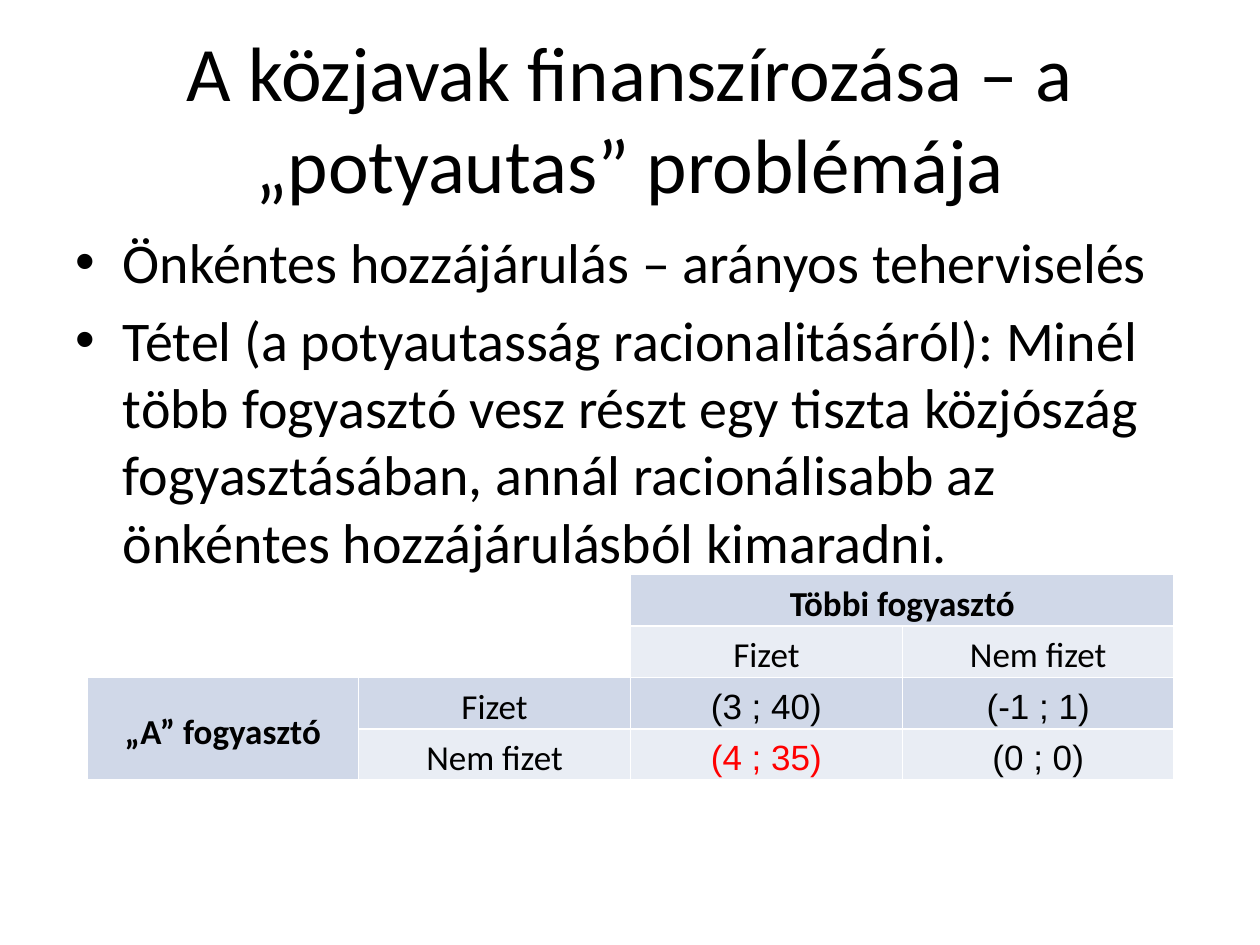
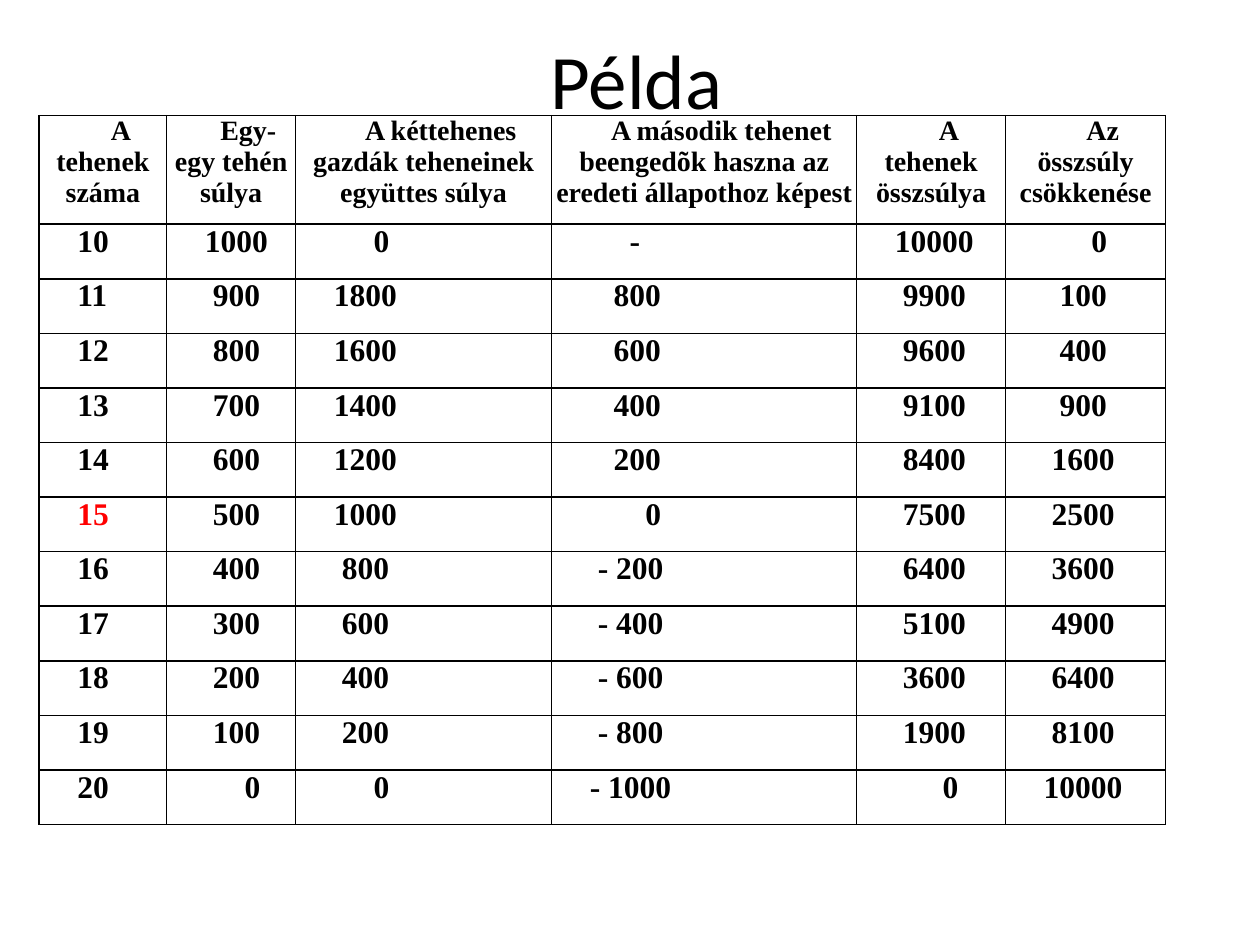
from lxml import etree
from pptx import Presentation
from pptx.dml.color import RGBColor
from pptx.enum.text import MSO_ANCHOR, MSO_AUTO_SIZE, PP_ALIGN
from pptx.oxml.ns import qn
from pptx.util import Cm, Pt

LEFT, CENTER = PP_ALIGN.LEFT, PP_ALIGN.CENTER
TOP, MIDDLE = MSO_ANCHOR.TOP, MSO_ANCHOR.MIDDLE
NO_AUTOFIT = MSO_AUTO_SIZE.NONE

COLORS = {
    "text": "000000",
    "highlight": "FF0000",
    "grid": "000000",
    "gap": "FFFFFF",
    "dark band": "D0D8E8",
    "light band": "E9EDF4",
}
HEADING_FONT = "Calibri"
PAYOFF_FONT = "Arial"
EXAMPLE_FONT = "Times New Roman"


def add_grid(slide, left, top, widths, heights, border, side_margin):
    """Add a plain table, sizes in cm, with every cell unfilled and bordered."""
    table = slide.shapes.add_table(
        len(heights), len(widths), Cm(left), Cm(top),
        Cm(sum(widths)), Cm(sum(heights))).table
    table.first_row = table.horz_banding = False
    for column, width in zip(table.columns, widths):
        column.width = Cm(width)
    for row, height in zip(table.rows, heights):
        row.height = Cm(height)
    for cell in table.iter_cells():
        cell.margin_left = cell.margin_right = Cm(side_margin)
        cell.margin_top = cell.margin_bottom = 0
        properties = cell._tc.get_or_add_tcPr()
        for side in ("lnL", "lnR", "lnT", "lnB"):
            line = etree.SubElement(properties, qn(f"a:{side}"), w=str(Pt(1)))
            fill = etree.SubElement(line, qn("a:solidFill"))
            etree.SubElement(fill, qn("a:srgbClr"), val=COLORS[border])
        cell.fill.background()
    return table


def write_cell(cell, text, font, size, align, anchor, color="text", bold=False):
    cell.vertical_anchor = anchor
    paragraph = cell.text_frame.paragraphs[0]
    paragraph.text = text
    paragraph.alignment = align
    paragraph.font.name = font
    paragraph.font.size = Pt(size)
    paragraph.font.bold = bold
    paragraph.font.color.rgb = RGBColor.from_string(COLORS[color])
    return paragraph


prs = Presentation()
prs.slide_width, prs.slide_height = Cm(25.4), Cm(19.05)
title_and_content, title_only = prs.slide_layouts[1], prs.slide_layouts[5]

# Titles
free_rider = prs.slides.add_slide(title_and_content)
example = prs.slides.add_slide(title_only)
for slide, heading, left, top in [
    (free_rider, "A közjavak finanszírozása – a „potyautas” problémája", 1.27, 0.76),
    (example, "Példa", 1.4, 0),
]:
    title = slide.shapes.title
    title.left, title.top = Cm(left), Cm(top)
    title.width, title.height = Cm(22.86), Cm(3.18)
    title.text_frame.text = heading
    title.text_frame.auto_size = NO_AUTOFIT
    title.text_frame.vertical_anchor = MIDDLE
    paragraph = title.text_frame.paragraphs[0]
    paragraph.alignment = CENTER
    paragraph.font.name = HEADING_FONT
    paragraph.font.size = Pt(44)
    paragraph.font.color.rgb = RGBColor.from_string(COLORS["text"])

# Free-rider theorem
theorem = free_rider.placeholders[1]
theorem.left, theorem.top = Cm(1.27), Cm(4.45)
theorem.width, theorem.height = Cm(22.86), Cm(12.57)
theorem.text_frame.text = "\n".join([
    "Önkéntes hozzájárulás – arányos teherviselés",
    "Tétel (a potyautasság racionalitásáról): Minél több fogyasztó vesz részt "
    "egy tiszta közjószág fogyasztásában, annál racionálisabb az önkéntes "
    "hozzájárulásból kimaradni.",
])
theorem.text_frame.auto_size = NO_AUTOFIT
for paragraph in theorem.text_frame.paragraphs:
    paragraph.font.name = HEADING_FONT
    paragraph.font.size = Pt(32)
    paragraph.font.color.rgb = RGBColor.from_string(COLORS["text"])

# Payoff matrix
payoffs = [
    ["", "", "Többi fogyasztó", ""],
    ["", "", "Fizet", "Nem fizet"],
    ["„A” fogyasztó", "Fizet", "(3 ; 40)", "(-1 ; 1)"],
    ["", "Nem fizet", "(4 ; 35)", "(0 ; 0)"],
]
players = ("Többi fogyasztó", "„A” fogyasztó")
equilibrium = "(4 ; 35)"
matrix = add_grid(free_rider, 1.75, 11.58, [5.48] * 4, [1.03] * 4, "gap", 0.18)
matrix.cell(0, 2).merge(matrix.cell(0, 3))
matrix.cell(2, 0).merge(matrix.cell(3, 0))
for r, row in enumerate(payoffs):
    for c, text in enumerate(row):
        cell = matrix.cell(r, c)
        paragraph = write_cell(
            cell, text, PAYOFF_FONT if text.startswith("(") else HEADING_FONT,
            20, CENTER, MIDDLE,
            color="highlight" if text == equilibrium else "text",
            bold=text in players)
        paragraph.line_spacing = 1.2
        if text:
            cell.fill.solid()
            band = "light band" if r % 2 else "dark band"
            cell.fill.fore_color.rgb = RGBColor.from_string(COLORS[band])

# Common pasture example
headers = [
    "A tehenek száma",
    "Egy-egy tehén súlya",
    "A kéttehenes gazdák teheneinek együttes súlya",
    "A második tehenet beengedõk haszna az eredeti állapothoz képest",
    "A tehenek összsúlya",
    "Az összsúly csökkenése",
]
herds = [
    ["10", "1000", "0", "-", "10000", "0"],
    ["11", "900", "1800", "800", "9900", "100"],
    ["12", "800", "1600", "600", "9600", "400"],
    ["13", "700", "1400", "400", "9100", "900"],
    ["14", "600", "1200", "200", "8400", "1600"],
    ["15", "500", "1000", "0", "7500", "2500"],
    ["16", "400", "800", "- 200", "6400", "3600"],
    ["17", "300", "600", "- 400", "5100", "4900"],
    ["18", "200", "400", "- 600", "3600", "6400"],
    ["19", "100", "200", "- 800", "1900", "8100"],
    ["20", "0", "0", "- 1000", "0", "10000"],
]
optimal_herd = "15"
first_indent, half_digit = 0.69, 0.16
pasture = add_grid(example, 0.79, 2.33, [2.57, 2.6, 5.16, 6.15, 3, 3.23],
                   [2.19] + [1.1] * len(herds), "grid", 0.08)
for c, header in enumerate(headers):
    paragraph = write_cell(pasture.cell(0, c), header, EXAMPLE_FONT, 16,
                           CENTER, TOP, bold=True)
    paragraph._p.get_or_add_pPr().set("indent", str(Cm(first_indent)))
    longest = max(len(herd[c]) for herd in herds)
    for r, herd in enumerate(herds, start=1):
        value = herd[c]
        paragraph = write_cell(
            pasture.cell(r, c), value, EXAMPLE_FONT, 18, LEFT, TOP,
            color="highlight" if value == optimal_herd else "text", bold=True)
        # Shorter numbers are centred under the longest one; zeros sit a digit further right
        steps = longest - len(value) + (2 if value == "0" else 0)
        indent = Cm(first_indent + steps * half_digit)
        paragraph._p.get_or_add_pPr().set("indent", str(indent))

prs.save("out.pptx")
